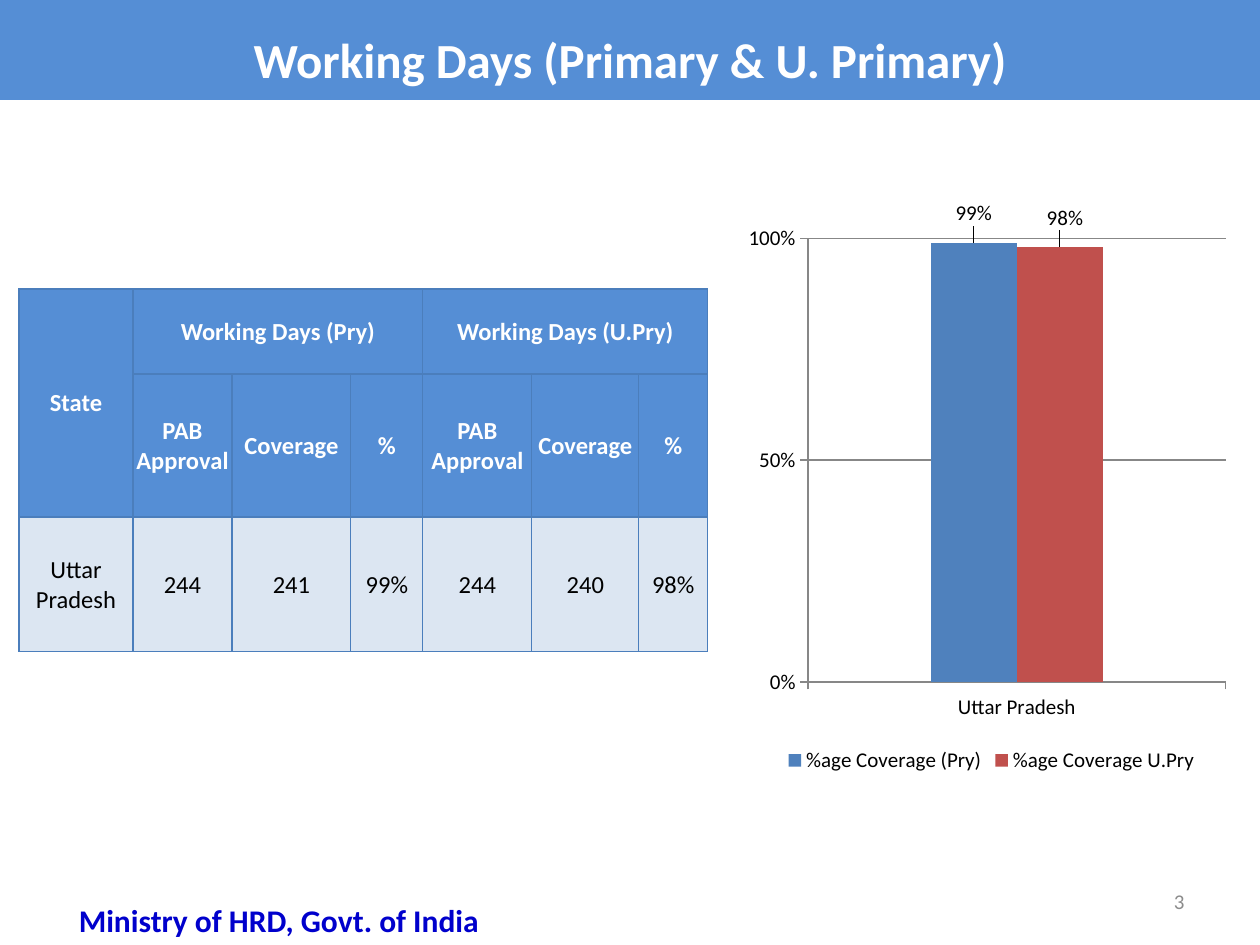
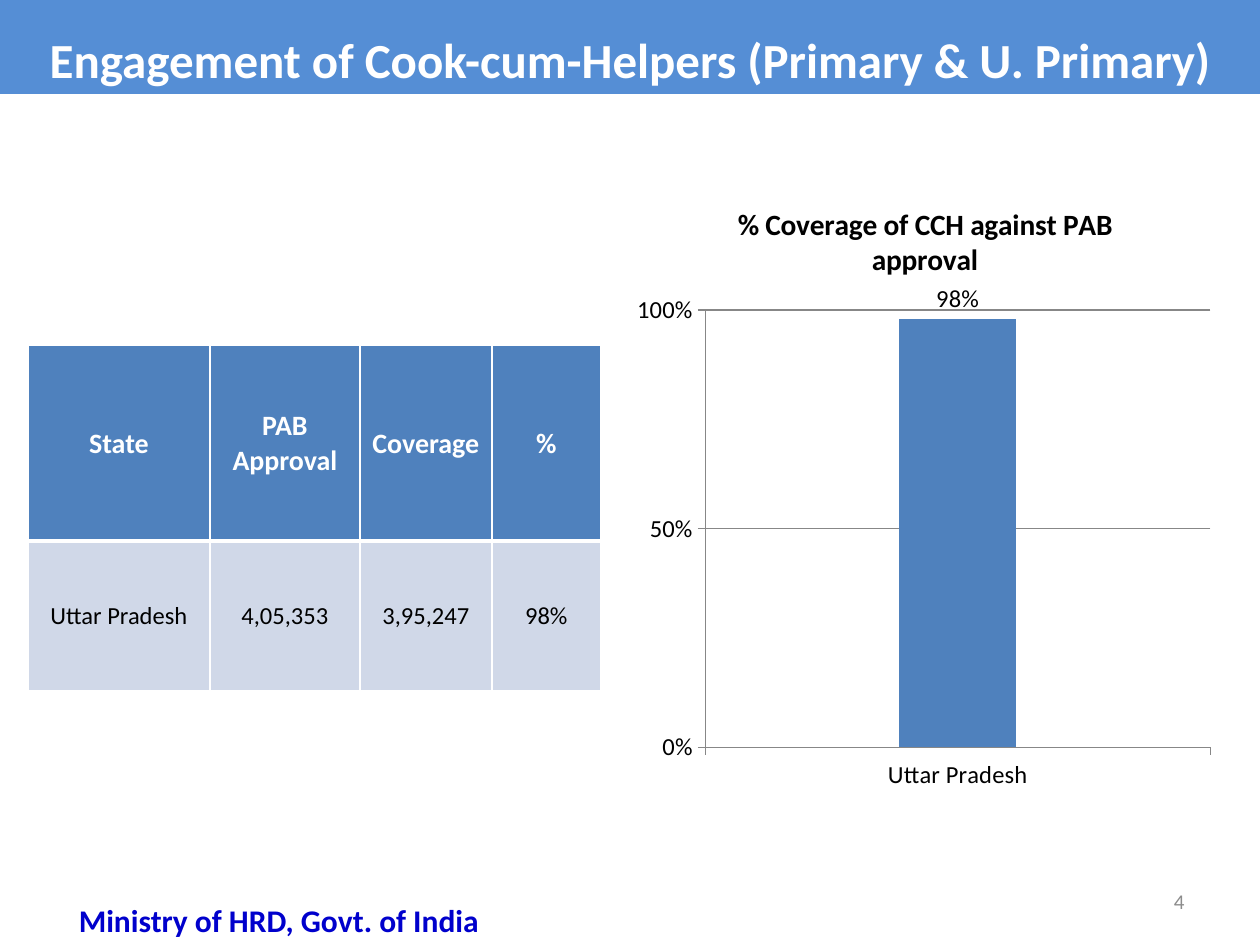
from pptx import Presentation
from pptx.chart.data import CategoryChartData
from pptx.dml.color import RGBColor
from pptx.enum.chart import XL_CHART_TYPE, XL_LABEL_POSITION, XL_LEGEND_POSITION, XL_TICK_MARK
from pptx.enum.text import MSO_ANCHOR, MSO_AUTO_SIZE, PP_ALIGN
from pptx.oxml import parse_xml
from pptx.oxml.ns import nsdecls
from pptx.util import Emu, Pt

CENTER, RIGHT = PP_ALIGN.CENTER, PP_ALIGN.RIGHT
TOP, MIDDLE = MSO_ANCHOR.TOP, MSO_ANCHOR.MIDDLE
OUTSIDE_END = XL_LABEL_POSITION.OUTSIDE_END

WHITE = RGBColor(0xFF, 0xFF, 0xFF)
BLACK = RGBColor(0x00, 0x00, 0x00)
BAND_BLUE = RGBColor(0x55, 0x8E, 0xD5)
ACCENT_BLUE = RGBColor(0x4F, 0x81, 0xBD)
ACCENT_RED = RGBColor(0xC0, 0x50, 0x4D)
BORDER_BLUE = RGBColor(0x4B, 0x7E, 0xBC)
PALE_BLUE = RGBColor(0xDC, 0xE6, 0xF2)
PALE_GREY = RGBColor(0xD0, 0xD8, 0xE8)
FOOTER_BLUE = RGBColor(0x00, 0x00, 0xCC)
NUMBER_GREY = RGBColor(0x8C, 0x8C, 0x8C)
AXIS_GREY = RGBColor(0x87, 0x87, 0x87)

FONT = "Calibri"
FOOTER = "Ministry of HRD, Govt. of India"
STATE = "Uttar Pradesh"
SUBHEADS = ["PAB Approval", "Coverage", "%"]

SLIDES = [
    {
        "title": "Working Days (Primary & U. Primary)",
        "band_height": 100,
        "number": "3",
        "table": {
            "at": (19, 289),
            "columns": [114, 99, 119, 72, 109, 107, 69],
            "rows": [85, 143, 135],
            "cells": [
                ["State", "Working Days (Pry)", "", "", "Working Days (U.Pry)", "", ""],
                ["", *SUBHEADS, *SUBHEADS],
                [STATE, "244", "241", "99%", "244", "240", "98%"],
            ],
            "merges": [((0, 0), (1, 0)), ((0, 1), (0, 3)), ((0, 4), (0, 6))],
            "head_fill": BAND_BLUE, "body_fill": PALE_BLUE,
            "head_size": 14, "body_size": 14,
            "border": (BORDER_BLUE, 0.75), "rule": 0.75,
        },
        "chart": {
            "at": (738, 197, 507, 581),
            "plot": (0.138, 0.071, 0.824, 0.764),
            "series": [("%age Coverage (Pry)", 0.99, ACCENT_BLUE),
                       ("%age Coverage U.Pry", 0.98, ACCENT_RED)],
            "label_offsets": [(0, -0.02), (0.01, -0.02)],
            "size": 12, "gap": 285, "title": None, "legend": True,
        },
    },
    {
        "title": "Engagement of Cook-cum-Helpers (Primary & U. Primary)",
        "band_height": 94,
        "number": "4",
        "table": {
            "at": (28, 345),
            "columns": [182, 150, 132, 109],
            "rows": [196, 150],
            "cells": [["State", *SUBHEADS], [STATE, "4,05,353", "3,95,247", "98%"]],
            "merges": [],
            "head_fill": ACCENT_BLUE, "body_fill": PALE_GREY,
            "head_size": 16, "body_size": 14,
            "border": (WHITE, 1), "rule": 3,
        },
        "chart": {
            "at": (620, 179, 610, 649),
            "plot": (0.14, 0.202, 0.828, 0.674),
            "series": [("Series 1", 0.98, ACCENT_BLUE)],
            "label_offsets": [],
            "size": 14, "gap": 330, "legend": False,
            "title": "% Coverage of CCH against PAB approval",
        },
    },
]


def px(*lengths):
    """Turn pixels (126 to the inch) into EMU."""
    return [Emu(round(length * 914400 / 126)) for length in lengths]


def set_font(font, size, color, bold=False):
    font.name, font.size, font.bold = FONT, Pt(size), bold
    font.color.rgb = color


def add_title(slide, text, height):
    title = slide.shapes.title
    title.left, title.top, title.width, title.height = px(0, 0, 1260, height)
    title.fill.solid()
    title.fill.fore_color.rgb = BAND_BLUE
    frame = title.text_frame
    frame.text = text
    frame.auto_size = MSO_AUTO_SIZE.NONE
    frame.vertical_anchor = TOP
    frame.margin_top = px(6)[0]
    paragraph = frame.paragraphs[0]
    paragraph.alignment = CENTER
    paragraph.line_spacing = 1.4
    set_font(paragraph.font, 28, WHITE, True)


def add_text(slide, box, text, alignment, anchor, size, color, bold=False):
    frame = slide.shapes.add_textbox(*px(*box)).text_frame
    frame.word_wrap = True
    frame.vertical_anchor = anchor
    frame.text = text
    paragraph = frame.paragraphs[0]
    paragraph.alignment = alignment
    set_font(paragraph.font, size, color, bold)


def add_borders(cell, color, widths):
    """Draw the left, right, top and bottom edges; call before the fill is set."""
    properties = cell._tc.get_or_add_tcPr()
    for side, width in zip("LRTB", widths):
        properties.append(parse_xml(
            f'<a:ln{side} {nsdecls("a")} w="{Pt(width)}"><a:solidFill>'
            f'<a:srgbClr val="{color}"/></a:solidFill></a:ln{side}>'))


def add_table(slide, data):
    columns, rows, cells = data["columns"], data["rows"], data["cells"]
    frame = slide.shapes.add_table(len(rows), len(columns),
                                   *px(*data["at"], sum(columns), sum(rows)))
    table = frame.table
    table.horz_banding = False
    for column, width in zip(table.columns, px(*columns)):
        column.width = width
    for row, height in zip(table.rows, px(*rows)):
        row.height = height
    for first, last in data["merges"]:
        table.cell(*first).merge(table.cell(*last))

    color, thin = data["border"]
    body_row = len(rows) - 1
    for r, texts in enumerate(cells):
        is_body = r == body_row
        for c, text in enumerate(texts):
            cell = table.cell(r, c)
            above = data["rule"] if is_body else thin
            below = data["rule"] if r == body_row - 1 else thin
            add_borders(cell, color, (thin, thin, above, below))
            cell.fill.solid()
            cell.fill.fore_color.rgb = data["body_fill" if is_body else "head_fill"]
            cell.vertical_anchor = MIDDLE
            cell.margin_left = cell.margin_right = cell.margin_top = px(1)[0]
            cell.margin_bottom = 0
            if text:
                cell.text = text
                paragraph = cell.text_frame.paragraphs[0]
                paragraph.alignment = CENTER
                set_font(paragraph.font, data["body_size" if is_body else "head_size"],
                         BLACK if is_body else WHITE, not is_body)


def layout_xml(x, y, size=None):
    """Manual layout in fractions of the chart: an inner plot if size is given, else an offset."""
    parts = [("x", x), ("y", y)]
    if size:
        parts = [("layoutTarget", "inner"), ("xMode", "edge"), ("yMode", "edge"),
                 *parts, ("w", size[0]), ("h", size[1])]
    body = "".join(f'<c:{name} val="{value}"/>' for name, value in parts)
    return parse_xml(f'<c:layout {nsdecls("c")}><c:manualLayout>{body}'
                     f'</c:manualLayout></c:layout>')


def add_chart(slide, data):
    chart_data = CategoryChartData(number_format="0%")
    chart_data.categories = [STATE]
    for name, value, _ in data["series"]:
        chart_data.add_series(name, [value])
    chart = slide.shapes.add_chart(XL_CHART_TYPE.COLUMN_CLUSTERED,
                                   *px(*data["at"]), chart_data).chart
    set_font(chart.font, data["size"], BLACK)

    chart.has_title = bool(data["title"])
    if data["title"]:
        frame = chart.chart_title.text_frame
        frame.text = data["title"]
        set_font(frame.paragraphs[0].font, 16.8, BLACK, True)
        chart.chart_title.include_in_layout = False
    chart.has_legend = data["legend"]
    if data["legend"]:
        chart.legend.position = XL_LEGEND_POSITION.BOTTOM
        chart.legend.include_in_layout = False

    values = chart.value_axis
    values.minimum_scale, values.maximum_scale, values.major_unit = 0, 1, 0.5
    values.tick_labels.number_format = "0%"
    values.tick_labels.number_format_is_linked = False
    values.has_major_gridlines = True
    for axis in (values, chart.category_axis):
        axis.major_tick_mark = XL_TICK_MARK.OUTSIDE
    for line in (values.format.line, values.major_gridlines.format.line,
                 chart.category_axis.format.line):
        line.color.rgb = AXIS_GREY
        line.width = Pt(0.75)

    plot = chart.plots[0]
    plot.gap_width = data["gap"]
    plot.overlap = 0
    plot.vary_by_categories = False
    for series, (_, _, color) in zip(plot.series, data["series"]):
        series.format.fill.solid()
        series.format.fill.fore_color.rgb = color
        labels = series.data_labels
        labels.show_value = True
        labels.number_format = "0%"
        labels.number_format_is_linked = False
        labels.position = OUTSIDE_END
        if data["label_offsets"]:
            series.points[0].data_label.position = OUTSIDE_END

    for label, offset in zip(chart.element.xpath(".//c:dLbl"), data["label_offsets"]):
        label.insert(1, layout_xml(*offset))
    plot_area = chart.element.xpath(".//c:plotArea")[0]
    for layout in plot_area.xpath("c:layout"):
        plot_area.remove(layout)
    x, y, *size = data["plot"]
    plot_area.insert(0, layout_xml(x, y, size))


def main():
    presentation = Presentation()
    presentation.slide_width, presentation.slide_height = px(1260, 945)
    for content in SLIDES:
        slide = presentation.slides.add_slide(presentation.slide_layouts[5])
        add_title(slide, content["title"], content["band_height"])
        add_table(slide, content["table"])
        add_chart(slide, content["chart"])
        add_text(slide, (903, 876, 294, 50), content["number"], RIGHT, MIDDLE, 12, NUMBER_GREY)
        add_text(slide, (32, 895, 494, 50), FOOTER, CENTER, TOP, 18, FOOTER_BLUE, True)
    presentation.save("out.pptx")


if __name__ == "__main__":
    main()
